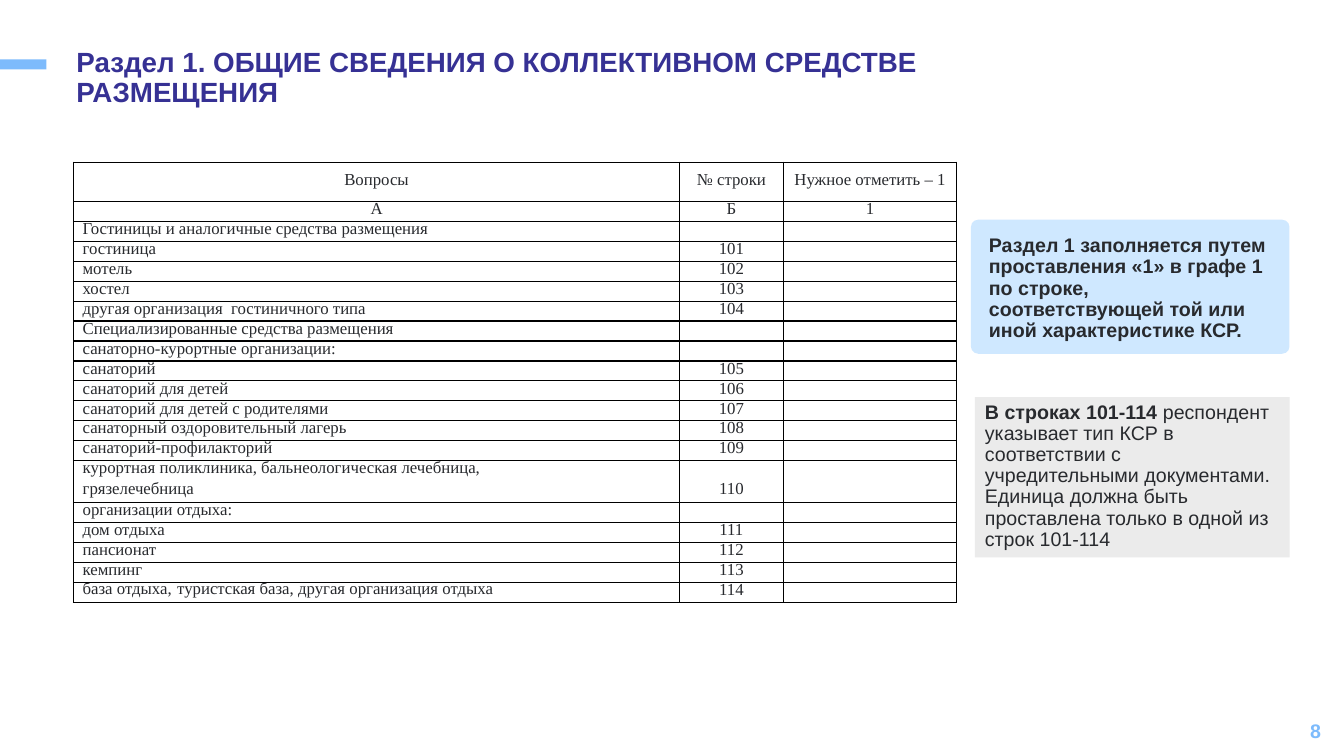
"""Build the slide on section 1 of the accommodation survey form."""
from dataclasses import dataclass
from typing import Any, Optional

import lxml.etree
import pptx
import pptx.dml.color
import pptx.enum.shapes
import pptx.enum.text
import pptx.oxml.ns
import pptx.util

Inches = pptx.util.Inches
Pt = pptx.util.Pt
SHAPE = pptx.enum.shapes.MSO_SHAPE
ALIGN = pptx.enum.text.PP_ALIGN
ANCHOR = pptx.enum.text.MSO_ANCHOR
qn = pptx.oxml.ns.qn

COLORS = {
    "accent": "7DBBFC", "title": "363194", "text": "282A2E", "note": "CFE8FF",
    "hint": "EBEBEB", "grid": "000000", "paper": "FFFFFF",
}
TITLE = {"name": "Arial", "size": Pt(19.8), "bold": True}
STRONG = {"name": "Arial", "size": Pt(14), "bold": True}
PLAIN = {**STRONG, "bold": False}
CELL = {"name": "Times New Roman", "size": Pt(12), "bold": False}
WIDE_SPACE = {**CELL, "size": Pt(15)}
BODY = {"line_spacing": 0.9, "alignment": ALIGN.LEFT}
NUMBER = {"alignment": ALIGN.RIGHT}
CELL_LEFT = {"line_spacing": Pt(10), "alignment": ALIGN.LEFT}
CELL_CENTER = {**CELL_LEFT, "alignment": ALIGN.CENTER}
CELL_BOX = {
    "margin_left": Inches(0.09), "margin_right": Inches(0.09),
    "margin_top": 0, "margin_bottom": 0, "vertical_anchor": ANCHOR.MIDDLE,
}


@dataclass
class Span:
    """A run of text with its font values."""
    text: str
    font: dict[str, Any]
    color: str = "text"


@dataclass
class Block:
    """A shape or, without a preset, a text box."""
    box: tuple[float, float, float, float]
    spans: tuple[Span, ...] = ()
    preset: Optional[Any] = None
    fill: str = "paper"
    para: Optional[dict[str, Any]] = None
    anchor: Any = ANCHOR.TOP
    radius: Optional[float] = None


BLOCKS = [
    Block((0, 0.59, 0.46, 0.1), preset=SHAPE.RECTANGLE, fill="accent"),
    Block((10.2, 7.05, 3, 0.4), (Span("8", STRONG, "accent"),),
          para=NUMBER, anchor=ANCHOR.MIDDLE),
    Block((9.63, 2.18, 3.16, 1.33), preset=SHAPE.ROUNDED_RECTANGLE,
          fill="note", radius=0.055),
    Block((0.66, 0.43, 10.41, 0.57),
          (Span("Раздел 1. ОБЩИЕ СВЕДЕНИЯ О КОЛЛЕКТИВНОМ СРЕДСТВЕ РАЗМЕЩЕНИЯ",
                TITLE, "title"),), para=BODY),
    Block((9.71, 2.29, 2.97, 1.43),
          (Span("Раздел 1 заполняется путем проставления «1» в графе 1 по строке, "
                "соответствующей той или иной характеристике КСР.", STRONG),),
          para=BODY),
    Block((9.67, 3.94, 3.12, 1.59),
          (Span("В строках 101-114 ", STRONG),
           Span("респондент указывает тип КСР в соответствии с учредительными "
                "документами. Единица должна быть проставлена только в одной из "
                "строк 101-114", PLAIN)),
          preset=SHAPE.RECTANGLE, fill="hint", para=BODY),
]

HEADERS = [("Вопросы", "№ строки", "Нужное отметить – 1"), ("А", "Б", "1")]
SPLIT_START = "курортная поликлиника, бальнеологическая лечебница,"
SPLIT_END = "грязелечебница"
LAST = "база отдыха, туристская база, другая организация отдыха"
UNNUMBERED = {
    "Гостиницы и аналогичные средства размещения",
    "Специализированные средства размещения",
    "санаторно-курортные организации:", "организации отдыха:", SPLIT_START,
}
QUESTIONS = [
    "Гостиницы и аналогичные средства размещения", "гостиница", "мотель", "хостел",
    "другая организация  гостиничного типа",
    "Специализированные средства размещения", "санаторно-курортные организации:",
    "санаторий", "санаторий для детей", "санаторий для детей с родителями",
    "санаторный оздоровительный лагерь", "санаторий-профилакторий",
    SPLIT_START, SPLIT_END, "организации отдыха:", "дом отдыха", "пансионат",
    "кемпинг", LAST,
]
COLUMNS = (6.01, 1.03, 1.72)
TABLE_TOP, TABLE_HEIGHT, HEADER_HEIGHT, SPLIT_HEIGHT = 1.61, 4.37, 0.39, 0.22


def rgb(name: str) -> pptx.dml.color.RGBColor:
    """Return a named colour."""
    return pptx.dml.color.RGBColor.from_string(COLORS[name])


def apply(target: Any, values: dict[str, Any]) -> None:
    """Set each format value on the target."""
    for key, value in values.items():
        setattr(target, key, value)


def write(p: Any, spans: tuple[Span, ...], para: dict[str, Any]) -> None:
    """Fill a paragraph with formatted runs."""
    apply(p, para)
    for span in spans:
        r = p.add_run()
        r.text = span.text
        apply(r.font, span.font)
        r.font.color.rgb = rgb(span.color)


def draw_block(s: Any, block: Block) -> None:
    """Draw one shape or text box."""
    box = [Inches(v) for v in block.box]
    if block.preset is None:
        sp = s.shapes.add_textbox(*box)
    else:
        sp = s.shapes.add_shape(block.preset, *box)
        sp.shadow.inherit = False
        sp.fill.solid()
        sp.fill.fore_color.rgb = rgb(block.fill)
        sp.line.fill.background()
    if block.radius is not None:
        sp.adjustments[0] = block.radius
    if block.spans:
        tf = sp.text_frame
        apply(tf, {"word_wrap": True, "vertical_anchor": block.anchor})
        write(tf.paragraphs[0], block.spans, block.para or {})


def draw_borders(cell: Any, hidden: str) -> None:
    """Line the sides of a cell, leaving the hidden one open."""
    tc_pr = cell._tc.get_or_add_tcPr()
    for side in ("L", "R", "T", "B"):
        ln = lxml.etree.SubElement(tc_pr, qn(f"a:ln{side}"), w=str(Pt(1)))
        if side == hidden:
            lxml.etree.SubElement(ln, qn("a:noFill"))
        else:
            fill = lxml.etree.SubElement(ln, qn("a:solidFill"))
            lxml.etree.SubElement(fill, qn("a:srgbClr"), val=COLORS["grid"])


def cell_spans(text: str) -> tuple[Span, ...]:
    """Return the runs of a cell."""
    if text == LAST:
        head, tail = text.split(", ", 1)
        return Span(head + ",", CELL), Span(" ", WIDE_SPACE), Span(tail, CELL)
    return (Span(text, CELL),) if text else ()


def table_rows() -> list[tuple[str, str, str]]:
    """Return the header rows and the numbered questions."""
    rows, number = list(HEADERS), 101
    for question in QUESTIONS:
        if question in UNNUMBERED:
            rows.append((question, "", ""))
        else:
            rows.append((question, str(number), ""))
            number += 1
    return rows


def draw_table(s: Any) -> None:
    """Draw the table of questions."""
    rows = table_rows()
    box = (0.73, TABLE_TOP, sum(COLUMNS), TABLE_HEIGHT)
    table = s.shapes.add_table(len(rows), len(COLUMNS), *map(Inches, box)).table
    apply(table, {"first_row": False, "horz_banding": False})
    for column, width in zip(table.columns, COLUMNS):
        column.width = Inches(width)
    regular = (TABLE_HEIGHT - HEADER_HEIGHT - SPLIT_HEIGHT) / (len(rows) - 2)
    heights = {HEADERS[0][0]: HEADER_HEIGHT, SPLIT_END: SPLIT_HEIGHT}
    for i, row in enumerate(rows):
        table.rows[i].height = Inches(heights.get(row[0], regular))
        hidden = {SPLIT_START: "B", SPLIT_END: "T"}.get(row[0], "")
        for j, text in enumerate(row):
            cell = table.cell(i, j)
            apply(cell, CELL_BOX)
            draw_borders(cell, hidden)
            cell.fill.solid()
            cell.fill.fore_color.rgb = rgb("paper")
            left = j == 0 and i >= len(HEADERS)
            p = cell.text_frame.paragraphs[0]
            write(p, cell_spans(text), CELL_LEFT if left else CELL_CENTER)
            if not text:
                lxml.etree.SubElement(p._p, qn("a:endParaRPr"), sz="1000")


def main() -> None:
    """Build and save the presentation."""
    prs = pptx.Presentation()
    apply(prs, {"slide_width": Inches(13.33), "slide_height": Inches(7.5)})
    s = prs.slides.add_slide(prs.slide_layouts[6])
    for block in BLOCKS[:-1]:
        draw_block(s, block)
    draw_table(s)
    draw_block(s, BLOCKS[-1])
    prs.save("out.pptx")


if __name__ == "__main__":
    main()
